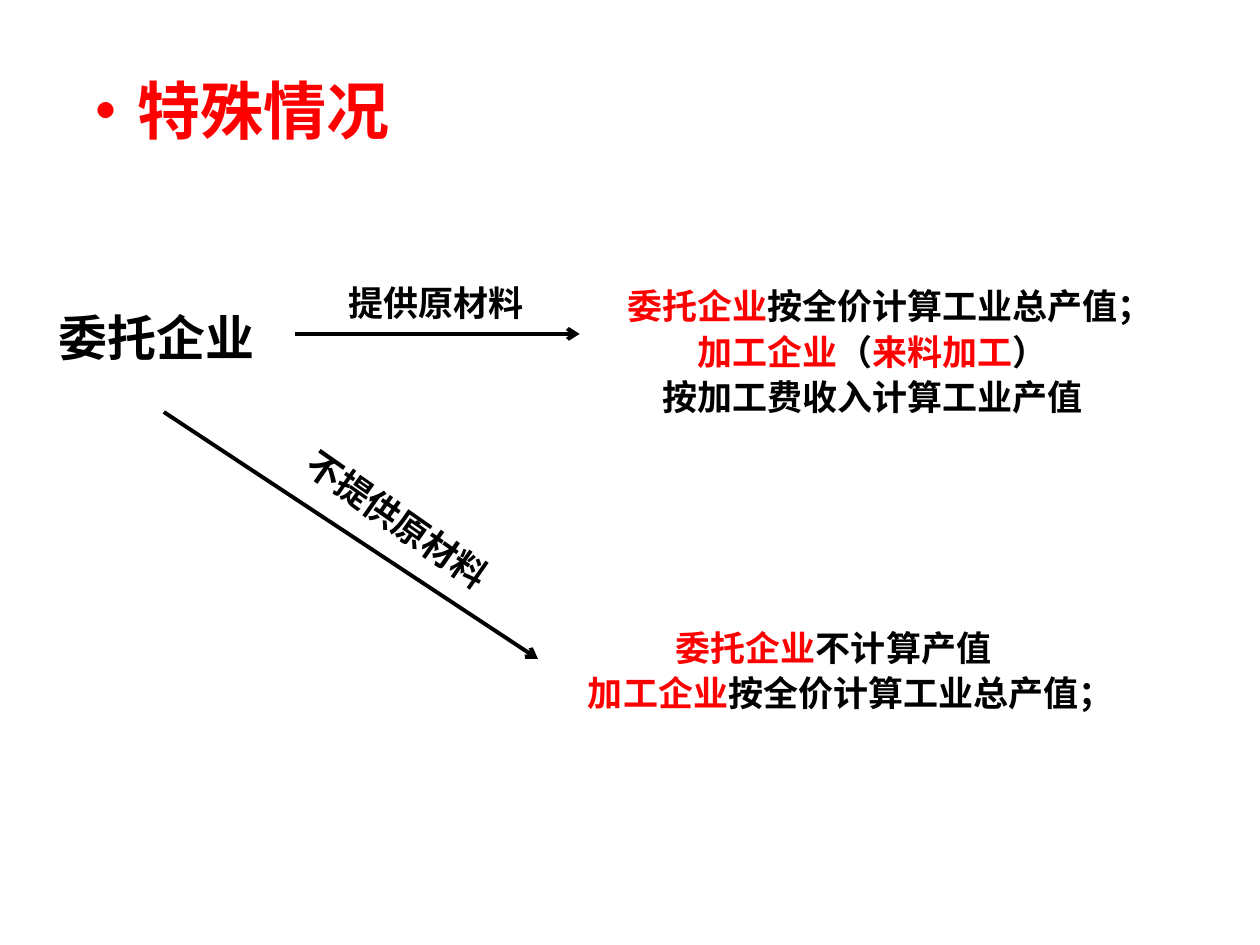
from dataclasses import dataclass

import pptx
import pptx.util
from lxml import etree
from pptx.dml.color import RGBColor
from pptx.enum.lang import MSO_LANGUAGE_ID
from pptx.enum.shapes import MSO_CONNECTOR
from pptx.enum.text import MSO_ANCHOR, MSO_AUTO_SIZE, PP_ALIGN
from pptx.oxml.ns import qn
from pptx.util import Inches


@dataclass(frozen=True)
class Theme:
    font: str = "Noto Sans CJK SC"
    black: RGBColor = RGBColor(0x00, 0x00, 0x00)
    red: RGBColor = RGBColor(0xFF, 0x00, 0x00)
    title_size: int = 36
    node_size: int = 28
    body_size: int = 20
    result_spacing: int = 26
    arrow_width: float = 2.25


THEME = Theme()


def place(shape, left, top, width, height):
    shape.left, shape.top = Inches(left), Inches(top)
    shape.width, shape.height = Inches(width), Inches(height)


def write_text(shape, paragraphs, size=THEME.body_size,
               align=PP_ALIGN.CENTER, spacing=None):
    """Fill a shape with paragraphs, each a list of (text, colour) runs."""
    frame = shape.text_frame
    frame.word_wrap = True
    frame.auto_size = MSO_AUTO_SIZE.SHAPE_TO_FIT_TEXT
    frame.vertical_anchor = MSO_ANCHOR.MIDDLE
    for index, runs in enumerate(paragraphs):
        paragraph = frame.add_paragraph() if index else frame.paragraphs[0]
        paragraph.alignment = align
        if spacing:
            paragraph.line_spacing = pptx.util.Pt(spacing)
        for text, color in runs:
            run = paragraph.add_run()
            run.text = text
            run.font.name = THEME.font
            run.font.size = pptx.util.Pt(size)
            run.font.bold = True
            run.font.color.rgb = color
            run.font.language_id = MSO_LANGUAGE_ID.SIMPLIFIED_CHINESE
            east_asian = etree.SubElement(run.font._element, qn("a:ea"))
            east_asian.set("typeface", THEME.font)


def add_title(slide, text):
    title = slide.shapes.title
    place(title, 0.49, 0.51, 10.66, 0.71)
    write_text(title, [[(text, THEME.red)]], size=THEME.title_size,
               align=PP_ALIGN.LEFT)


def add_text(slide, box, paragraphs, rotation=0, **text_format):
    shape = slide.shapes.add_textbox(*map(Inches, box))
    shape.rotation = rotation
    write_text(shape, paragraphs, **text_format)


def add_arrow(slide, start, end):
    arrow = slide.shapes.add_connector(
        MSO_CONNECTOR.STRAIGHT, *map(Inches, start + end))
    arrow.line.color.rgb = THEME.black
    arrow.line.width = pptx.util.Pt(THEME.arrow_width)
    etree.SubElement(arrow.line._get_or_add_ln(), qn("a:tailEnd")).set("type", "arrow")
    etree.SubElement(arrow._element.spPr, qn("a:effectLst"))


def main():
    presentation = pptx.Presentation()
    presentation.slide_width = Inches(10)
    presentation.slide_height = Inches(7.5)
    slide = presentation.slides.add_slide(presentation.slide_layouts[5])
    black, red = THEME.black, THEME.red

    add_title(slide, "·特殊情况")
    add_text(slide, (0.28, 2.39, 1.92, 0.57), [[("委托企业", black)]],
             size=THEME.node_size)

    add_arrow(slide, (2.34, 2.65), (4.6, 2.65))
    add_text(slide, (2.65, 2.18, 1.62, 0.44), [[("提供原材料", black)]])
    add_text(slide, (4.84, 2.19, 4.17, 1.17), [
        [("委托企业", red), ("按全价计算工业总产值；", black)],
        [("加工企业", red), ("（", black), ("来料加工", red), ("）", black)],
        [("按加工费收入计算工业产值", black)],
    ], spacing=THEME.result_spacing)

    add_arrow(slide, (1.3, 3.27), (4.27, 5.23))
    add_text(slide, (2.13, 3.9, 2.05, 0.44), [[("不提供原材料", black)]],
             rotation=35)
    add_text(slide, (4.45, 4.89, 4.33, 0.83), [
        [("委托企业", red), ("不计算产值", black)],
        [("加工企业", red), ("按全价计算工业总产值；", black)],
    ], spacing=THEME.result_spacing)

    presentation.save("out.pptx")


if __name__ == "__main__":
    main()
